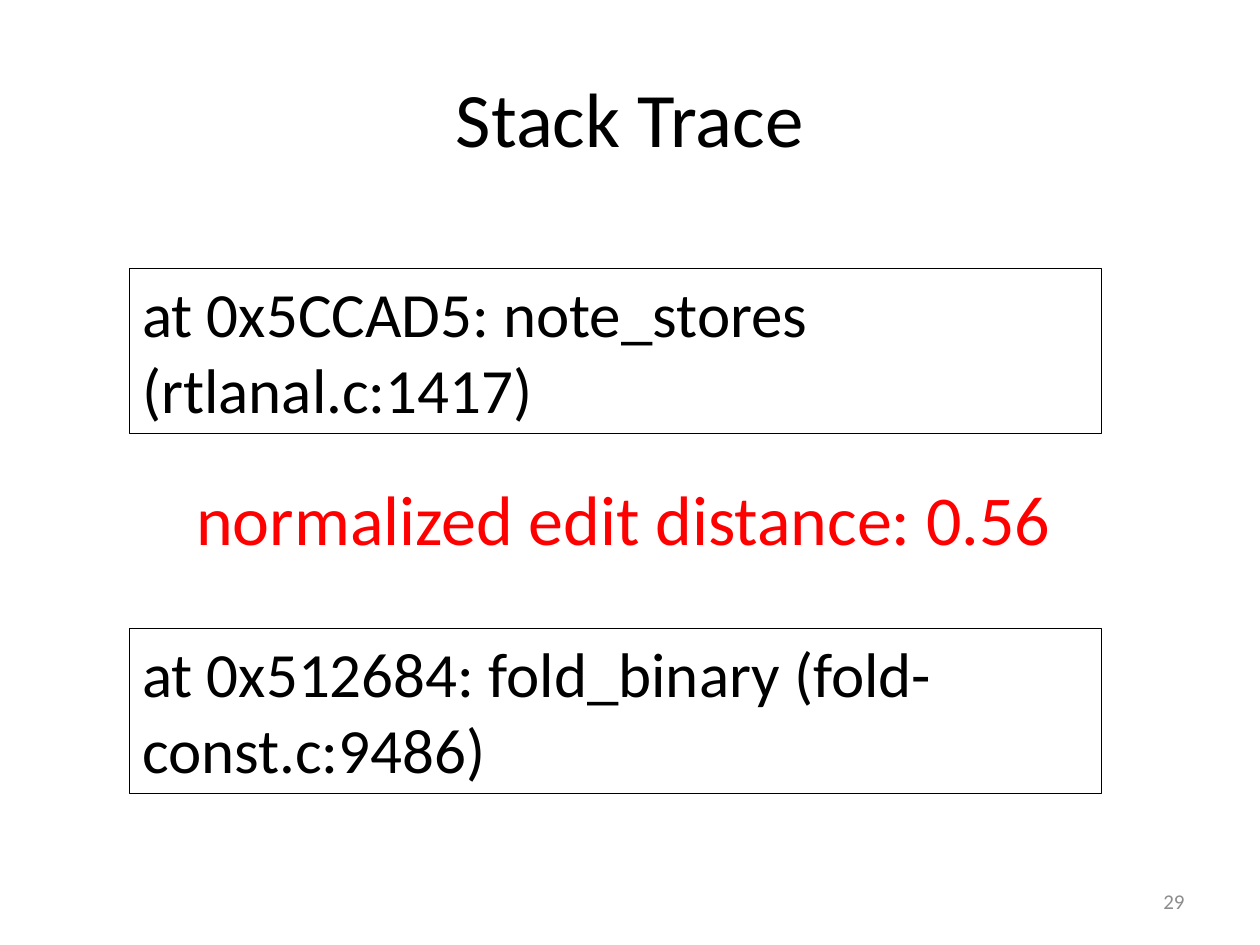
import pptx
import pptx.dml.color
import pptx.enum.shapes
import pptx.enum.text
import pptx.util

Inches = pptx.util.Inches
RGBColor = pptx.dml.color.RGBColor
Align = pptx.enum.text.PP_ALIGN
Anchor = pptx.enum.text.MSO_ANCHOR
Shape = pptx.enum.shapes.MSO_SHAPE

BLACK = RGBColor(0x00, 0x00, 0x00)
RED = RGBColor(0xFF, 0x00, 0x00)
GRAY = RGBColor(0x8C, 0x8C, 0x8C)

# Content
TITLE = "Stack Trace"
FRAMES = [
    (2.13, "at 0x5CCAD5: note_stores (rtlanal.c:1417)"),
    (4.99, "at 0x512684: fold_binary (fold-const.c:9486)"),
]
DISTANCE = "normalized edit distance: 0.56"
PAGE_NUMBER = "29"
LEFT = 1.03


def write(shape, text, size, color=BLACK, align=Align.LEFT, anchor=Anchor.MIDDLE):
    frame = shape.text_frame
    frame.word_wrap = True
    frame.vertical_anchor = anchor
    para = frame.paragraphs[0]
    para.alignment = align
    span = para.add_run()
    span.text = text
    span.font.name = "Calibri"
    span.font.size = pptx.util.Pt(size)
    span.font.color.rgb = color


def add_box(page, kind, left, top, width, height, line=None):
    box = page.shapes.add_shape(kind, *map(Inches, (left, top, width, height)))
    box.shadow.inherit = False
    box.fill.background()
    if line is None:
        box.line.fill.background()
    else:
        box.line.color.rgb = line
        box.line.width = pptx.util.Pt(0.75)
    return box


def main():
    deck = pptx.Presentation()
    deck.slide_width, deck.slide_height = Inches(10), Inches(7.5)
    page = deck.slides.add_slide(deck.slide_layouts[5])

    # Title
    title = page.shapes.title
    title.left, title.top = Inches(0.5), Inches(0.3)
    title.width, title.height = Inches(9), Inches(1.25)
    write(title, TITLE, 44, align=Align.CENTER)

    # Stack frames
    for top, text in FRAMES:
        box = add_box(page, Shape.RECTANGLE, LEFT, top, 7.71, 1.31, line=BLACK)
        write(box, text, 36, anchor=Anchor.TOP)
        box.text_frame.auto_size = pptx.enum.text.MSO_AUTO_SIZE.SHAPE_TO_FIT_TEXT

    # Distance between the frames
    label = add_box(page, Shape.ROUNDED_RECTANGLE, LEFT, 3.72, 7.84, 0.78)
    write(label, DISTANCE, 40, color=RED, align=Align.CENTER)

    # Page number
    number = page.shapes.add_textbox(*map(Inches, (7.17, 6.95, 2.33, 0.4)))
    write(number, PAGE_NUMBER, 12, color=GRAY, align=Align.RIGHT)

    deck.save("out.pptx")


if __name__ == "__main__":
    main()
